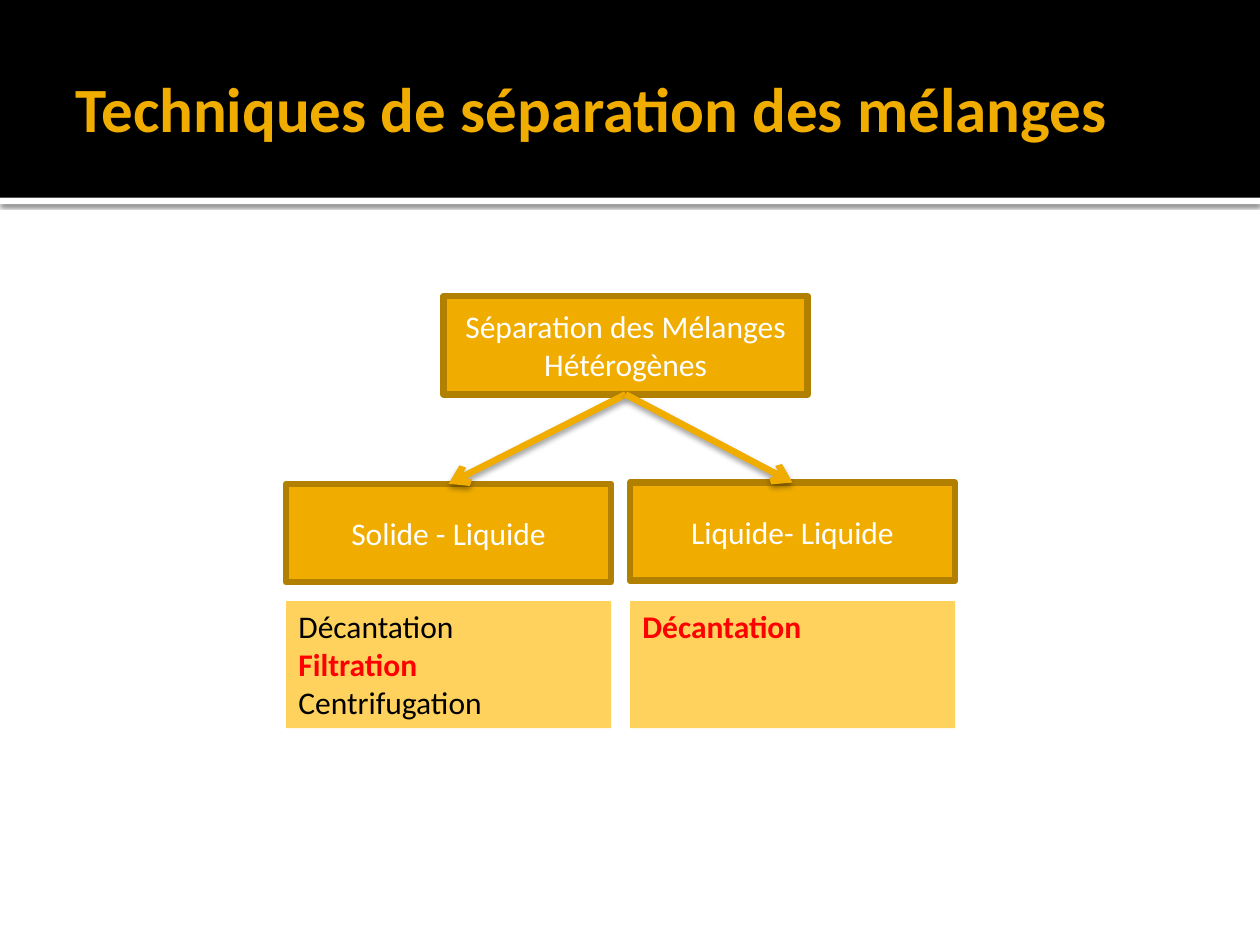
from lxml.etree import SubElement
from pptx import Presentation
from pptx.dml.color import RGBColor
from pptx.enum.shapes import MSO_CONNECTOR, MSO_SHAPE
from pptx.enum.text import MSO_ANCHOR, PP_ALIGN
from pptx.oxml.ns import qn
from pptx.util import Inches, Pt

COLORS = {"gold": "F0AD00", "edge": "B28000", "pale": "FFD25D", "white": "FFFFFF",
          "black": "000000", "red": "FF0000"}
FONT = "Calibri"
LINE_WIDTH = 3.78

TITLE = "Techniques de séparation des mélanges"
ROOT = "Séparation des Mélanges Hétérogènes"
# Branch: label, top of its box, techniques as (name, highlighted)
BRANCHES = [
    ("Solide - Liquide", 3.84,
     [("Décantation", False), ("Filtration", True), ("Centrifugation", False)]),
    ("Liquide- Liquide", 3.83, [("Décantation", True)]),
]

BAND_H = 1.57
BOX_H = 0.78
COL_LEFT, COL_W, COL_STEP = 2.27, 2.58, 2.73
LIST_TOP, LIST_H = 4.77, 1.01


def rgb(name):
    return RGBColor.from_string(COLORS[name])


def style(p, size, color, bold=False):
    p.font.name, p.font.size, p.font.bold = FONT, Pt(size), bold
    p.font.color.rgb = rgb(color)


def add_rect(s, x, y, w, h, fill, edge=None):
    sp = s.shapes.add_shape(MSO_SHAPE.RECTANGLE, Inches(x), Inches(y), Inches(w), Inches(h))
    sp.fill.solid()
    sp.fill.fore_color.rgb = rgb(fill)
    if edge:
        sp.line.color.rgb = rgb(edge)
        sp.line.width = Pt(LINE_WIDTH)
        SubElement(sp.line._ln, qn("a:round"))
    else:
        sp.line.fill.background()
    sp.shadow.inherit = False
    return sp


def add_shadow(sp, alpha, blur, dist):
    """Cast a black shadow downwards; alpha in percent, lengths in points."""
    spPr = sp._element.spPr
    effects = spPr.find(qn("a:effectLst"))
    if effects is None:
        effects = SubElement(spPr, qn("a:effectLst"))
    shadow = SubElement(effects, qn("a:outerShdw"), blurRad=str(Pt(blur)),
                        dist=str(Pt(dist)), dir="5400000", rotWithShape="0")
    color = SubElement(shadow, qn("a:srgbClr"), val=COLORS["black"])
    SubElement(color, qn("a:alpha"), val=str(alpha * 1000))


def add_box(s, x, y, w, text):
    sp = add_rect(s, x, y, w, BOX_H, "gold", "edge")
    tf = sp.text_frame
    tf.word_wrap = True
    tf.vertical_anchor = MSO_ANCHOR.MIDDLE
    p = tf.paragraphs[0]
    p.text = text
    p.alignment = PP_ALIGN.CENTER
    style(p, 18, "white")
    return sp


def add_arrow(s, parent, child):
    c = s.shapes.add_connector(MSO_CONNECTOR.STRAIGHT, 0, 0, 0, 0)
    c.begin_connect(parent, 2)
    c.end_connect(child, 0)
    c.line.color.rgb = rgb("gold")
    c.line.width = Pt(LINE_WIDTH)
    SubElement(c.line._ln, qn("a:tailEnd"), type="arrow")
    add_shadow(c, 38, 3.5, 2)


def add_techniques(s, x, techniques):
    tf = add_rect(s, x, LIST_TOP, COL_W, LIST_H, "pale").text_frame
    tf.word_wrap = True
    tf.vertical_anchor = MSO_ANCHOR.TOP
    for i, (name, highlighted) in enumerate(techniques):
        p = tf.add_paragraph() if i else tf.paragraphs[0]
        p.text = name
        p.alignment = PP_ALIGN.LEFT
        style(p, 18, "red" if highlighted else "black", highlighted)


def add_title(s):
    title = s.shapes.title
    title.left, title.top = Inches(0.5), Inches(0.17)
    title.width, title.height = Inches(9), Inches(1.37)
    # Bring the title in front of the band
    s.shapes._spTree.append(title._element)
    tf = title.text_frame
    tf.word_wrap = True
    tf.vertical_anchor = MSO_ANCHOR.MIDDLE
    tf.margin_left = Inches(0.1)
    tf.margin_right = tf.margin_top = tf.margin_bottom = Inches(0.05)
    p = tf.paragraphs[0]
    p.text = TITLE
    p.alignment = PP_ALIGN.LEFT
    style(p, 36, "gold", True)


def main():
    prs = Presentation()
    prs.slide_width, prs.slide_height = Inches(10), Inches(7.5)
    s = prs.slides.add_slide(prs.slide_layouts[5])

    rule = add_rect(s, 0, BAND_H, 10, 0.05, "white")
    add_shadow(rule, 60, 2.5, 0.8)
    add_rect(s, 0, 0, 10, BAND_H, "black")
    add_title(s)

    root = add_box(s, 3.52, 2.35, 2.89, ROOT)
    columns = [COL_LEFT + i * COL_STEP for i in range(len(BRANCHES))]
    boxes = [add_box(s, x, top, COL_W, label)
             for x, (label, top, _) in zip(columns, BRANCHES)]
    for box in boxes:
        add_arrow(s, root, box)
    for x, (_, _, techniques) in zip(columns, BRANCHES):
        add_techniques(s, x, techniques)

    prs.save("out.pptx")


if __name__ == "__main__":
    main()
